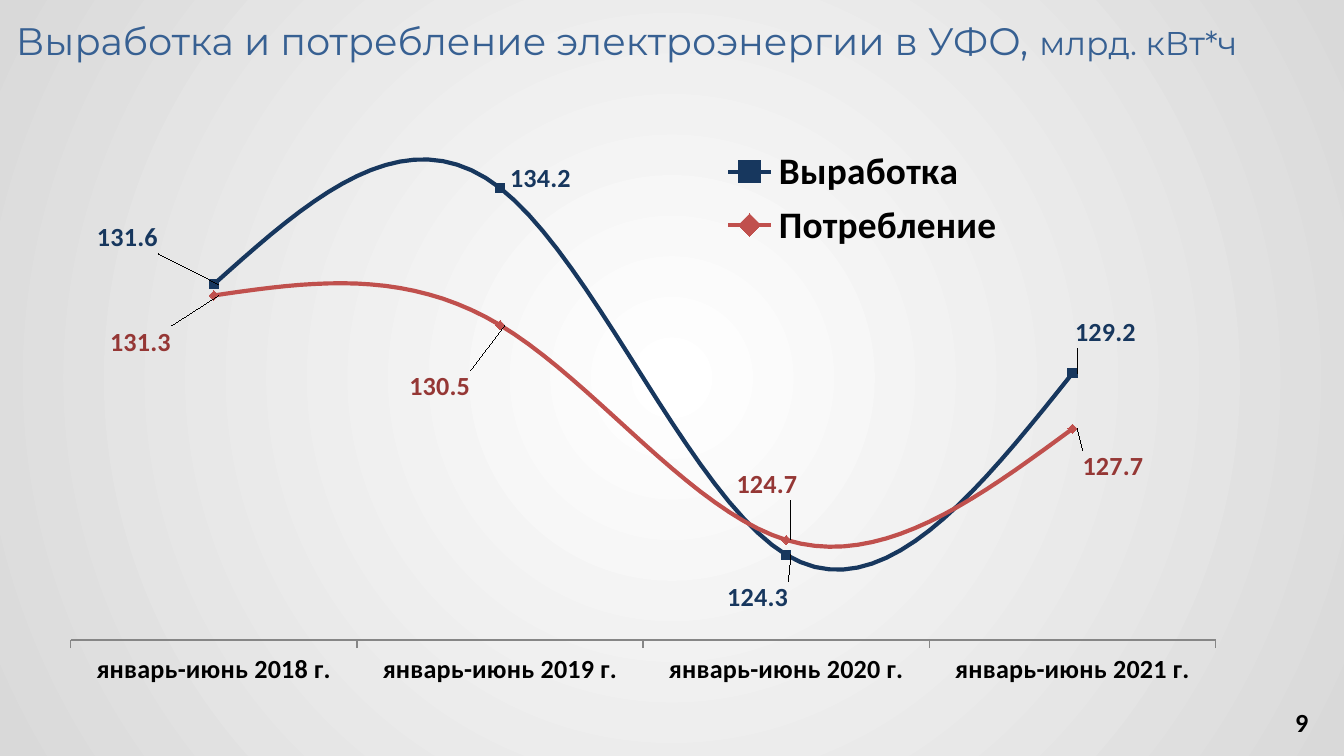
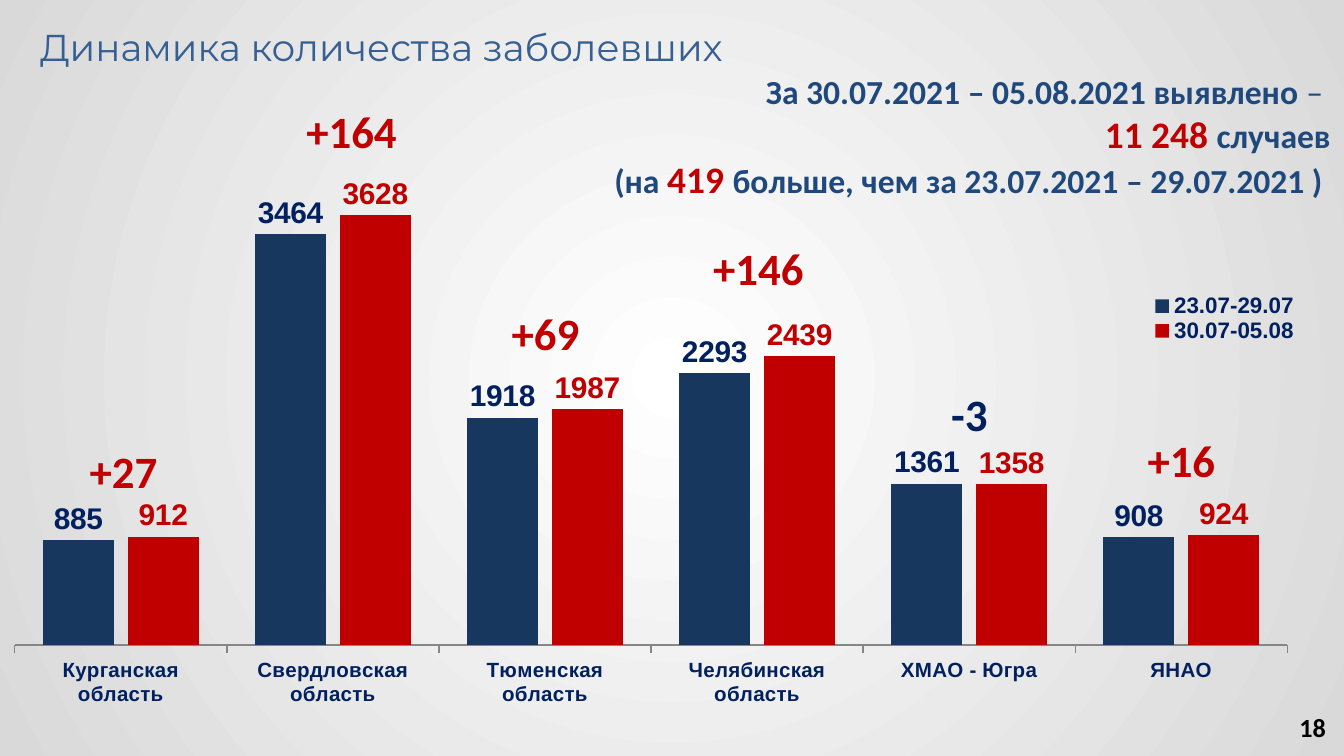
from lxml.etree import SubElement
from pptx import Presentation
from pptx.chart.data import CategoryChartData
from pptx.dml.color import RGBColor
from pptx.enum.chart import (XL_CHART_TYPE, XL_LABEL_POSITION, XL_LEGEND_POSITION,
                             XL_MARKER_STYLE, XL_TICK_MARK)
from pptx.enum.shapes import MSO_SHAPE
from pptx.enum.text import MSO_ANCHOR, PP_ALIGN
from pptx.oxml import parse_xml
from pptx.oxml.ns import nsdecls, qn
from pptx.util import Pt

WHITE = RGBColor(0xFF, 0xFF, 0xFF)
BLACK = RGBColor(0, 0, 0)
MIST = RGBColor(0xD9, 0xD9, 0xD9)
GREY = RGBColor(0x86, 0x86, 0x86)
STEEL = RGBColor(0x37, 0x60, 0x92)
BLUE = RGBColor(0x1F, 0x49, 0x7D)
NAVY = RGBColor(0x17, 0x37, 0x5E)
INK = RGBColor(0x00, 0x20, 0x60)
RED = RGBColor(0xC0, 0, 0)
BRICK = RGBColor(0xC0, 0x50, 0x4D)
WINE = RGBColor(0x95, 0x37, 0x35)
WIDE, HIGH = 720, 405


def style(font, size, hue, bold=True, face="Calibri"):
    """Set size, colour, weight and face of a font."""
    font.size, font.bold, font.name = Pt(size), bold, face
    font.color.rgb = hue


def ground(slide):
    """Cover the slide with a radial gradient."""
    rect = slide.shapes.add_shape(MSO_SHAPE.RECTANGLE, 0, 0, Pt(WIDE), Pt(HIGH))
    rect.shadow.inherit = False
    rect.line.fill.background()
    rect.fill.gradient()
    for stop, hue in zip(rect.fill.gradient_stops, (WHITE, MIST)):
        stop.color.rgb = hue
    line = rect.element.spPr.find(".//" + qn("a:lin"))
    line.getparent().replace(line, parse_xml(
        f'<a:path {nsdecls("a")} path="circle">'
        '<a:fillToRect l="50000" t="50000" r="50000" b="50000"/></a:path>'))


def note(slide, box, rows, align=PP_ALIGN.LEFT, face="Calibri", wrap=True,
         anchor=MSO_ANCHOR.TOP):
    """Place rows of (text, size, colour, bold) runs in a box."""
    frame = slide.shapes.add_textbox(*map(Pt, box)).text_frame
    frame.word_wrap, frame.vertical_anchor = wrap, anchor
    for spot, row in enumerate(rows):
        para = frame.add_paragraph() if spot else frame.paragraphs[0]
        para.alignment = align
        for text, *look in row:
            run = para.add_run()
            run.text = text
            style(run.font, *look, face=face)


def title(slide, box, *parts):
    """Write the heading from (text, size) parts."""
    note(slide, box, [[(text, size, STEEL, False) for text, size in parts]],
         face="Montserrat")


def number(slide, left, top, text):
    """Write the page number."""
    note(slide, (left, top, 168, 21.6), [[(text, 14, BLACK, True)]],
         PP_ALIGN.RIGHT, anchor=MSO_ANCHOR.MIDDLE)


def layout(owner, index, inner=False, **marks):
    """Give a chart part a manual layout in fractions of the chart."""
    for old in owner.findall(qn("c:layout")):
        owner.remove(old)
    node = parse_xml(f'<c:layout {nsdecls("c")}><c:manualLayout/></c:layout>')
    if inner:
        marks = {"layoutTarget": "inner", **marks}
    for name, mark in marks.items():
        SubElement(node[0], qn("c:" + name)).set("val", str(mark))
    owner.insert(index, node)


def frame(owner, index, size, box, inner=False):
    """Fix a chart part to a box in points within the chart."""
    x, y, w, h = (part / size[i % 2] for i, part in enumerate(box))
    layout(owner, index, inner, xMode="edge", yMode="edge", x=x, y=y, w=w, h=h)


def graph(slide, kind, box, cats, rows, face, hue, sizes, limits, plot, key, form):
    """Add a chart with a fixed plot, a fixed legend and no value axis."""
    data = CategoryChartData(number_format=form)
    data.categories = cats
    for name, *_, vals in rows:
        data.add_series(name, vals)
    chart = slide.shapes.add_chart(kind, *map(Pt, box), data).chart
    chart.has_title = False
    base, tick, text = sizes
    style(chart.font, base, hue, face=face)
    cat, val = chart.category_axis, chart.value_axis
    cat.major_tick_mark = XL_TICK_MARK.OUTSIDE
    style(cat.tick_labels.font, tick, hue, face=face)
    cat.format.line.color.rgb = GREY
    cat.format.line.width = Pt(0.75)
    val.visible = val.has_major_gridlines = False
    val.minimum_scale, val.maximum_scale = limits
    chart.has_legend = True
    chart.legend.position = XL_LEGEND_POSITION.RIGHT
    chart.legend.include_in_layout = False
    style(chart.legend.font, text, hue, face=face)
    root = chart.element
    frame(root.xpath("c:chart/c:plotArea")[0], 0, box[2:], plot, True)
    frame(root.xpath("c:chart/c:legend")[0], 1, box[2:], key)
    return chart


def label(tag, size, hue, face, place):
    """Style a data label or a set of them."""
    style(tag.font, size, hue, face=face)
    tag.position = place


def unlead(tags):
    """Turn off the leader lines of moved labels."""
    tags.append(parse_xml(
        f'<c:extLst {nsdecls("c")}><c:ext uri="{{CE6537A1-D6FC-4f65-9D91-7224C49458BB}}" '
        'xmlns:c15="http://schemas.microsoft.com/office/drawing/2012/chart">'
        '<c15:showLeaderLines val="0"/></c:ext></c:extLst>'))


def curves(slide, box):
    """Draw the smooth lines of output and use."""
    rows = [
        ("Выработка", NAVY, NAVY, XL_MARKER_STYLE.SQUARE,
         [(-68, -25), (0, -5), (-37, 23), (-4, -22)], (131.6, 134.2, 124.3, 129.2)),
        ("Потребление", BRICK, WINE, XL_MARKER_STYLE.DIAMOND,
         [(-61, 25), (-54, 33), (-32, -30), (0, 20)], (131.3, 130.5, 124.7, 127.7)),
    ]
    cats = [f"январь-июнь {year} г." for year in range(2018, 2022)]
    chart = graph(slide, XL_CHART_TYPE.LINE_MARKERS, box, cats, rows, "Calibri", BLACK,
                  (10, 14, 20), (122, 136), (25.7, 18.2, 613.4, 278),
                  (370, 29, 160, 61), "0.0")
    for line, (_, hue, ink, mark, shifts, _) in zip(chart.plots[0].series, rows):
        line.smooth = True
        line.format.line.color.rgb = hue
        line.format.line.width = Pt(2.25)
        line.marker.style, line.marker.size = mark, 5
        line.marker.format.fill.solid()
        line.marker.format.fill.fore_color.rgb = hue
        line.marker.format.line.color.rgb = hue
        line.data_labels.show_value = True
        look = 14, ink, "Calibri", XL_LABEL_POSITION.RIGHT
        label(line.data_labels, *look)
        for spot in range(len(shifts)):
            label(line.points[spot].data_label, *look)
        tags = line.data_labels._element
        for tag, (x, y) in zip(tags.findall(qn("c:dLbl")), shifts):
            layout(tag, 1, x=x / box[2], y=y / box[3])
        unlead(tags)


def bars(slide, box):
    """Draw the paired columns of two weeks."""
    rows = [("23.07-29.07", NAVY, INK, (885, 3464, 1918, 2293, 1361, 908)),
            ("30.07-05.08", RED, RED, (912, 3628, 1987, 2439, 1358, 924))]
    cats = ["Курганская область", "Свердловская область", "Тюменская область",
            "Челябинская область", "ХМАО - Югра", "ЯНАО"]
    chart = graph(slide, XL_CHART_TYPE.COLUMN_CLUSTERED, box, cats, rows, "Arial", INK,
                  (12, 11, 12), (0, 4000), (10.8, 7.4, 681.8, 254),
                  (619, 73, 80, 27), "General")
    plot = chart.plots[0]
    plot.gap_width, plot.overlap, plot.vary_by_categories = 80, -20, False
    for bar, (_, hue, ink, _) in zip(plot.series, rows):
        bar.format.fill.solid()
        bar.format.fill.fore_color.rgb = hue
        bar.data_labels.show_value = True
        label(bar.data_labels, 16, ink, "Arial", XL_LABEL_POSITION.OUTSIDE_END)


def deltas(slide):
    """Write the change above each pair of columns."""
    for text, left, top, wide in (
            ("+27", 41, 234, 56), ("+164", 157, 51.8, 68), ("+69", 267, 160, 56),
            ("+146", 375, 125.3, 68), ("-3", 502.5, 203.8, 42),
            ("+16", 607.7, 228.2, 56)):
        hue = INK if text.startswith("-") else RED
        note(slide, (left, top, wide, 34.6), [[(text, 24, hue, True)]], wrap=False)


def power(slide):
    """Build the slide on electric power."""
    ground(slide)
    title(slide, (1.4, 5.8, 716.4, 49),
          ("Выработка и потребление электроэнергии в УФО, ", 20.5),
          ("млрд. кВт*ч", 17.6))
    number(slide, 540, 375.8, "9")
    curves(slide, (12.2, 46.8, 660.2, 357.8))


def cases(slide):
    """Build the slide on case counts."""
    ground(slide)
    number(slide, 549.4, 378.7, "18")
    title(slide, (14.4, 9.4, 557.3, 29.5), ("Динамика количества заболевших", 20))
    bars(slide, (-2.9, 84.2, 720, 321))
    note(slide, (269.3, 34.6, 450.7, 77.8), [
        [("За 30.07.2021 – 05.08.2021 выявлено ", 18, BLUE, True),
         ("– ", 18, BLUE, False)],
        [("11 248 ", 20, RED, True), ("случаев", 18, BLUE, True)],
        [("(на ", 18, BLUE, True), ("419 ", 20, RED, True),
         ("больше, чем за 23.07.2021 – 29.07.2021 ) ", 18, BLUE, True)],
    ], PP_ALIGN.RIGHT)
    deltas(slide)


def main():
    """Build and save the deck."""
    deck = Presentation()
    deck.slide_width, deck.slide_height = Pt(WIDE), Pt(HIGH)
    for build in (power, cases):
        build(deck.slides.add_slide(deck.slide_layouts[6]))
    deck.save("out.pptx")


if __name__ == "__main__":
    main()
